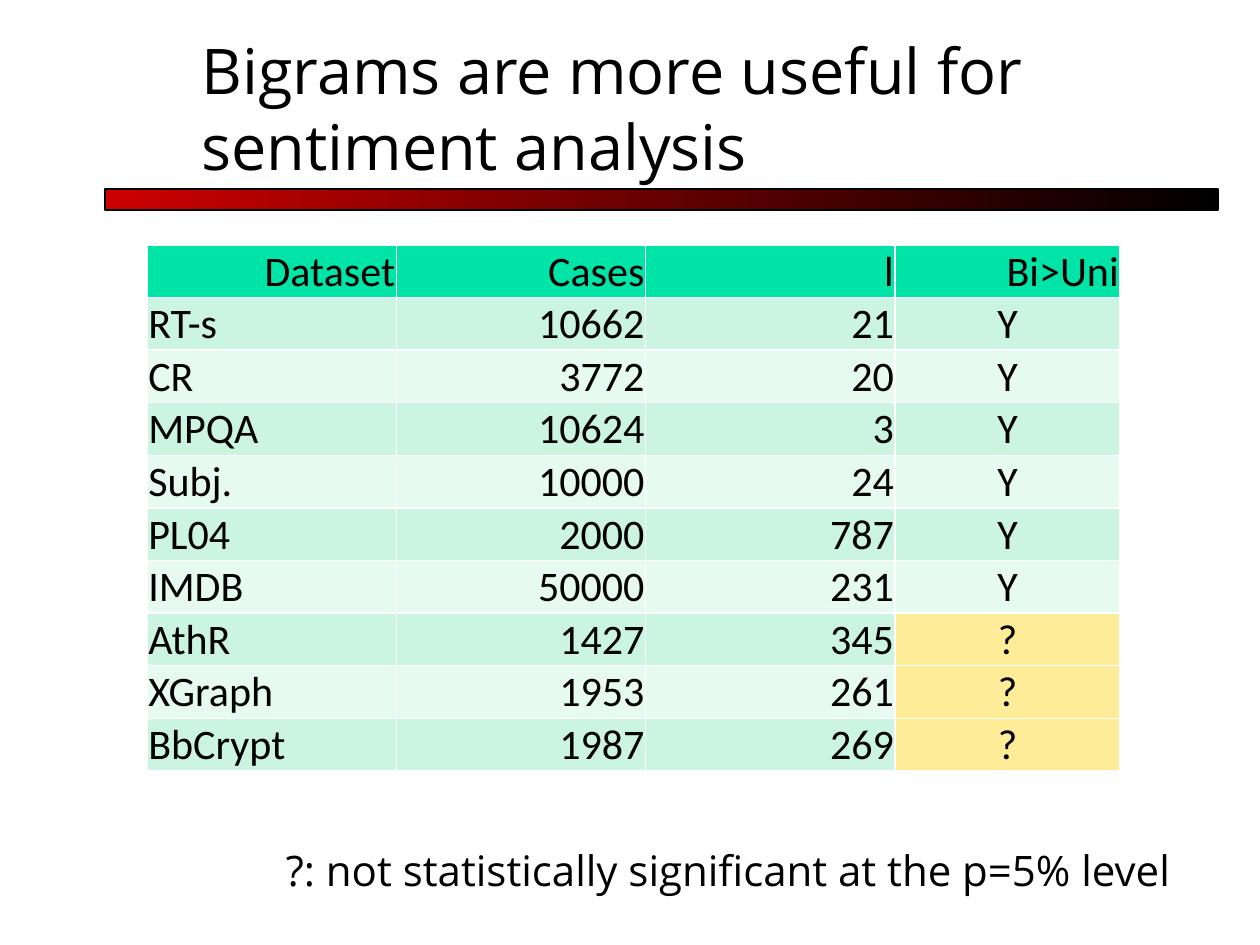
from dataclasses import dataclass

from pptx import Presentation
from pptx.dml.color import RGBColor
from pptx.enum.shapes import MSO_SHAPE
from pptx.enum.text import MSO_ANCHOR, MSO_AUTO_SIZE, PP_ALIGN
from pptx.util import Pt

RECT = MSO_SHAPE.RECTANGLE
TOP, BOTTOM = MSO_ANCHOR.TOP, MSO_ANCHOR.BOTTOM
LEFT, CENTER, RIGHT = PP_ALIGN.LEFT, PP_ALIGN.CENTER, PP_ALIGN.RIGHT
GROW = MSO_AUTO_SIZE.SHAPE_TO_FIT_TEXT
NO_FIT = MSO_AUTO_SIZE.NONE


@dataclass(frozen=True)
class Theme:
    ink: str = "000000"
    bar_start: str = "CC0000"
    header: str = "00E4A8"
    bands: tuple = ("CCF5E1", "E7FAF1")
    uncertain: str = "FFEC99"
    text_font: str = "Open Sans"
    table_font: str = "Calibri"
    title_size: int = 36
    body_size: int = 24


THEME = Theme()

HEADINGS = ("Dataset", "Cases", "l", "Bi>Uni")
RESULTS = (
    ("RT-s", "10662", "21", "Y"),
    ("CR", "3772", "20", "Y"),
    ("MPQA", "10624", "3", "Y"),
    ("Subj.", "10000", "24", "Y"),
    ("PL04", "2000", "787", "Y"),
    ("IMDB", "50000", "231", "Y"),
    ("AthR", "1427", "345", "?"),
    ("XGraph", "1953", "261", "?"),
    ("BbCrypt", "1987", "269", "?"),
)
COLUMN_WIDTHS = (142.5, 142.5, 142.5, 128.5)
COLUMN_ALIGNS = (LEFT, RIGHT, RIGHT, CENTER)
ROW_HEIGHT = 29.5


def rgb(value):
    return RGBColor.from_string(value)


def write(tf, text, *, font=THEME.text_font, size=THEME.body_size, align=LEFT):
    p = tf.paragraphs[0]
    p.alignment = align
    r = p.add_run()
    r.text = text
    r.font.name = font
    r.font.size = Pt(size)
    r.font.bold = False
    r.font.color.rgb = rgb(THEME.ink)


def add_text(slide, box, text, *, anchor=TOP, wrap=True, fit=NO_FIT, **fmt):
    sp = slide.shapes.add_textbox(*map(Pt, box))
    tf = sp.text_frame
    tf.word_wrap = wrap
    tf.auto_size = fit
    tf.vertical_anchor = anchor
    write(tf, text, **fmt)


def add_gradient_bar(slide, box):
    sp = slide.shapes.add_shape(RECT, *map(Pt, box))
    sp.shadow.inherit = False
    sp.fill.gradient()
    sp.fill.gradient_angle = 0
    for stop, color in zip(sp.fill.gradient_stops, (THEME.bar_start, THEME.ink)):
        stop.color.rgb = rgb(color)
    sp.line.color.rgb = rgb(THEME.ink)
    sp.line.width = Pt(0.75)


def fill_cell(cell, text, color, align):
    cell.margin_left = cell.margin_right = cell.margin_top = Pt(0.75)
    cell.margin_bottom = Pt(0)
    cell.vertical_anchor = BOTTOM
    cell.fill.solid()
    cell.fill.fore_color.rgb = rgb(color)
    write(cell.text_frame, text, font=THEME.table_font, align=align)


def add_results_table(slide, left, top):
    rows = len(RESULTS) + 1
    size = sum(COLUMN_WIDTHS), rows * ROW_HEIGHT
    table = slide.shapes.add_table(
        rows, len(HEADINGS), *map(Pt, (left, top, *size))).table
    for column, width in zip(table.columns, COLUMN_WIDTHS):
        column.width = Pt(width)
    for c, heading in enumerate(HEADINGS):
        fill_cell(table.cell(0, c), heading, THEME.header, RIGHT)
    for i, result in enumerate(RESULTS):
        for c, (text, align) in enumerate(zip(result, COLUMN_ALIGNS)):
            color = THEME.uncertain if text == "?" else THEME.bands[i % 2]
            fill_cell(table.cell(i + 1, c), text, color, align)


def main():
    prs = Presentation()
    prs.slide_width, prs.slide_height = Pt(720), Pt(540)
    slide = prs.slides.add_slide(prs.slide_layouts[6])
    add_gradient_bar(slide, (60, 108, 636, 12))
    add_text(slide, (108, 30, 612, 78),
             "Bigrams are more useful for sentiment analysis",
             anchor=BOTTOM, size=THEME.title_size)
    add_results_table(slide, 84, 140)
    add_text(slide, (120, 479, 556, 36),
             "?: not statistically significant at the p=5% level",
             wrap=False, fit=GROW, align=RIGHT)
    prs.save("out.pptx")


if __name__ == "__main__":
    main()
